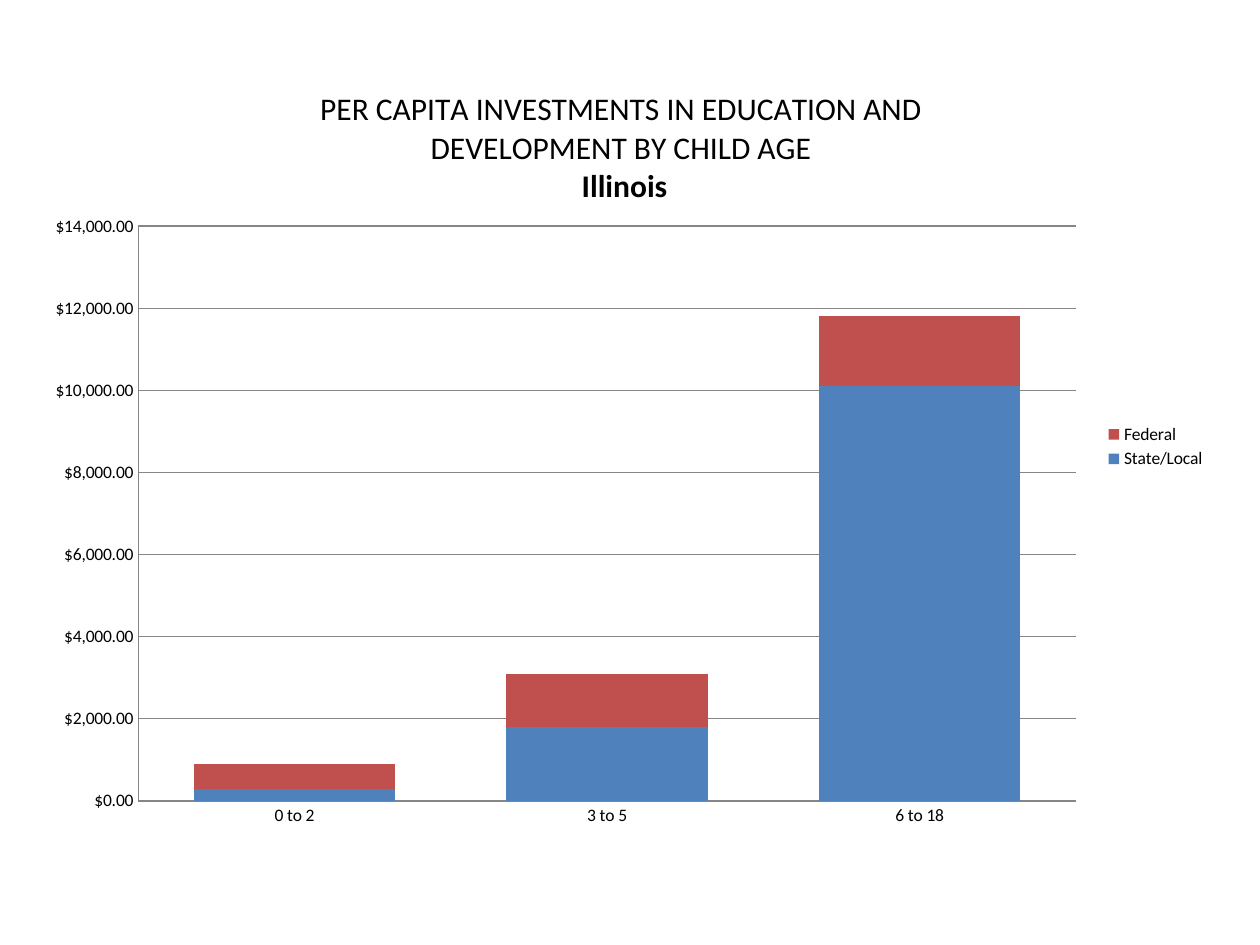
"""Build a slide with a stacked column chart of per capita investments by child age."""
from lxml import etree
from pptx import Presentation
from pptx.chart.data import CategoryChartData
from pptx.dml.color import RGBColor
from pptx.enum.chart import XL_CHART_TYPE, XL_LEGEND_POSITION, XL_TICK_MARK
from pptx.oxml.ns import qn
from pptx.util import Inches, Pt

STACKED = XL_CHART_TYPE.COLUMN_STACKED
RIGHT = XL_LEGEND_POSITION.RIGHT
NO_TICK = XL_TICK_MARK.NONE

COLORS = {"text": "000000", "line": "868686", "State/Local": "4F81BD", "Federal": "C0504D"}
FONT = "Calibri"
TITLE = [
    ("PER CAPITA INVESTMENTS IN EDUCATION AND ", False),
    ("DEVELOPMENT BY CHILD AGE ", False),
    ("Illinois", True),
]
AGES = ["0 to 2", "3 to 5", "6 to 18"]
INVESTMENTS = {"State/Local": [300, 1800, 10100], "Federal": [600, 1300, 1700]}
CHART_BOX = (0.25, 0.42, 9.42, 6.25)
TITLE_PLACE = {"xMode": "edge", "yMode": "edge", "x": 0.24, "y": 0.04}
PLOT_PLACE = {"layoutTarget": "inner", "xMode": "edge", "yMode": "edge",
              "x": 0.09, "y": 0.22, "w": 0.79, "h": 0.73}


def color(name):
    return RGBColor.from_string(COLORS[name])


def set_font(font, size, bold=False):
    font.name, font.size, font.bold = FONT, Pt(size), bold
    font.color.rgb = color("text")


def set_line(line):
    line.color.rgb = color("line")
    line.width = Pt(0.75)


def place(element, values, position):
    for old in element.findall(qn("c:layout")):
        element.remove(old)
    layout = etree.Element(qn("c:layout"))
    manual = etree.SubElement(layout, qn("c:manualLayout"))
    for tag, value in values.items():
        etree.SubElement(manual, qn(f"c:{tag}")).set("val", str(value))
    element.insert(position, layout)


def add_title(chart):
    frame = chart.chart_title.text_frame
    for index, (text, bold) in enumerate(TITLE):
        para = frame.add_paragraph() if index else frame.paragraphs[0]
        span = para.add_run()
        span.text = text
        set_font(para.font, 18, bold)
        set_font(span.font, 18, bold)
    chart.chart_title.include_in_layout = False
    place(chart.chart_title._element, TITLE_PLACE, 1)


def add_investment_chart(page):
    data = CategoryChartData(number_format='"$"#,##0.00')
    data.categories = AGES
    for name, values in INVESTMENTS.items():
        data.add_series(name, values)
    chart = page.shapes.add_chart(STACKED, *map(Inches, CHART_BOX), data).chart
    set_font(chart.font, 10)
    add_title(chart)

    chart.has_legend = True
    chart.legend.position = RIGHT
    chart.legend.include_in_layout = False

    for axis in (chart.category_axis, chart.value_axis):
        axis.major_tick_mark = axis.minor_tick_mark = NO_TICK
        set_line(axis.format.line)
    values = chart.value_axis
    values.minimum_scale, values.maximum_scale, values.major_unit = 0, 14000, 2000
    values.has_major_gridlines = True
    set_line(values.major_gridlines.format.line)
    values.tick_labels.number_format = '"$"#,##0.00'
    values.tick_labels.number_format_is_linked = False

    plot = chart.plots[0]
    plot.gap_width, plot.overlap, plot.vary_by_categories = 55, 100, False
    for series in plot.series:
        series.format.fill.solid()
        series.format.fill.fore_color.rgb = color(series.name)
    place(chart._chartSpace.chart.plotArea, PLOT_PLACE, 0)


def main():
    deck = Presentation()
    deck.slide_width, deck.slide_height = Inches(10), Inches(7.5)
    page = deck.slides.add_slide(deck.slide_layouts[6])
    add_investment_chart(page)
    deck.save("out.pptx")


if __name__ == "__main__":
    main()
